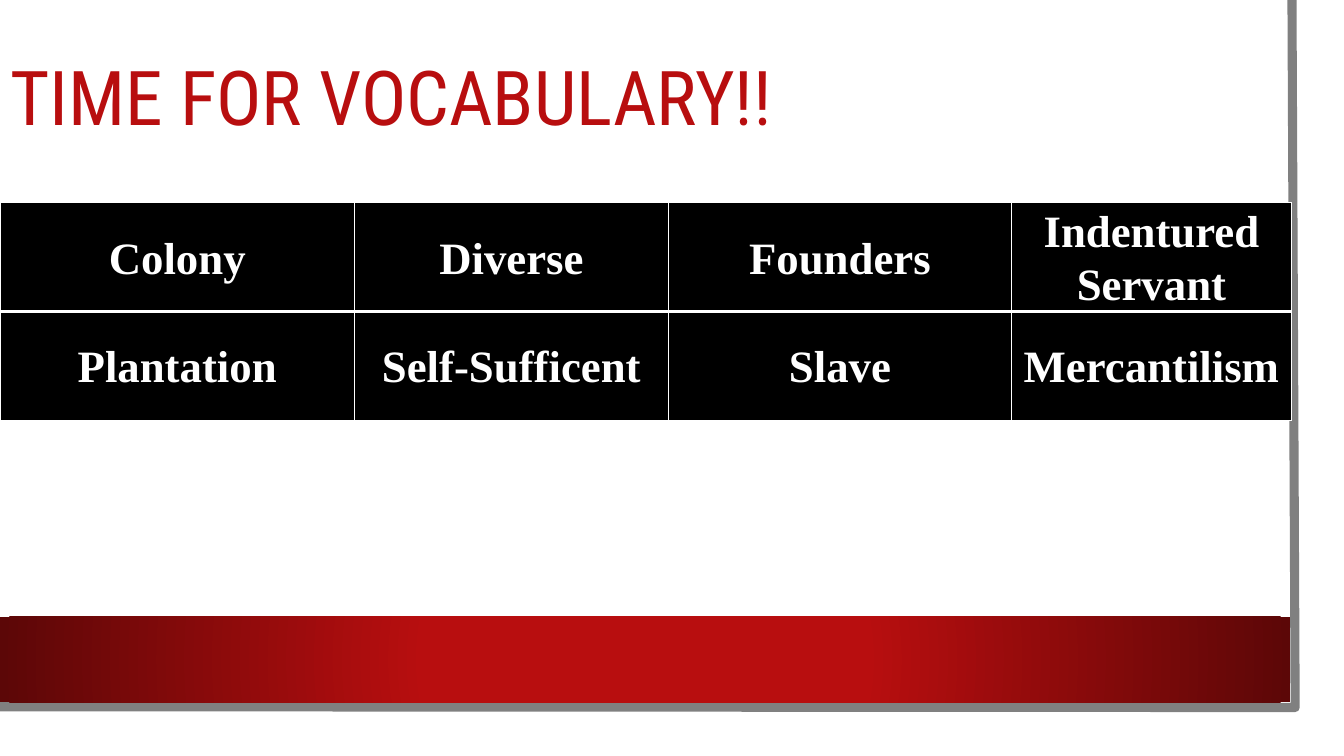
import pptx
import pptx.dml.color
import pptx.enum.shapes
import pptx.enum.text
import pptx.oxml
import pptx.oxml.ns
import pptx.util
from pptx.util import Cm

COLORS = {"white": "FFFFFF", "black": "000000", "gray": "808080",
          "red": "B80E0F", "dark red": "5C0707"}
WORDS = [["Colony", "Diverse", "Founders", "Indentured Servant"],
         ["Plantation", "Self-Sufficent", "Slave", "Mercantilism"]]
COLUMN_WIDTHS = [8.94, 7.9, 8.66, 7.04]
ROW_HEIGHT = 2.74


def rgb(name):
    """Return the named colour."""
    return pptx.dml.color.RGBColor.from_string(COLORS[name])


class VocabularySlide:
    """Hold the style and the current slide."""

    title_font = "Roboto Condensed"
    word_font = "Times New Roman"

    def __init__(self, page):
        """Remember the page to draw on."""
        self.page = page

    def format_text(self, frame, font, size, color, bold, spacing, align):
        """Format the only paragraph of a text frame."""
        para = frame.paragraphs[0]
        para.alignment = align
        para.line_spacing = spacing
        for span in para.runs:
            span.font.name = font
            span.font.size = pptx.util.Pt(size)
            span.font.bold = bold
            span.font.color.rgb = rgb(color)

    def rectangle(self, left, top, width, height):
        """Add a plain white rectangle."""
        box = self.page.shapes.add_shape(
            pptx.enum.shapes.MSO_SHAPE.RECTANGLE,
            Cm(left), Cm(top), Cm(width), Cm(height))
        box.shadow.inherit = False
        box.fill.solid()
        box.fill.fore_color.rgb = rgb("white")
        box.line.fill.background()
        return box

    def glowing_band(self, left, top, width, height):
        """Add a band that darkens from its centre outwards."""
        box = self.rectangle(left, top, width, height)
        box.fill.gradient()
        stops = zip(box.fill.gradient_stops, [(0.34, "red"), (1, "dark red")])
        for stop, (position, color) in stops:
            stop.position = position
            stop.color.rgb = rgb(color)
        linear = box.element.spPr.find(".//" + pptx.oxml.ns.qn("a:lin"))
        linear.getparent().replace(linear, pptx.oxml.parse_xml(
            f'<a:path {pptx.oxml.ns.nsdecls("a")} path="circle">'
            '<a:fillToRect l="50000" t="50000" r="50000" b="50000"/></a:path>'))

    def edge(self, points, color, weight):
        """Add an open outline through the points."""
        start, *rest = [(Cm(x), Cm(y)) for x, y in points]
        builder = self.page.shapes.build_freeform(*start)
        builder.add_line_segments(rest, close=False)
        outline = builder.convert_to_shape()
        outline.shadow.inherit = False
        outline.fill.background()
        outline.line.color.rgb = rgb(color)
        outline.line.width = pptx.util.Pt(weight)

    def title(self, text, left, top, width, height):
        """Place the title in front of the backdrop."""
        title = self.page.shapes.title
        title.left, title.top = Cm(left), Cm(top)
        title.width, title.height = Cm(width), Cm(height)
        frame = title.text_frame
        frame.text = text
        frame.word_wrap = True
        frame.auto_size = pptx.enum.text.MSO_AUTO_SIZE.NONE
        frame.vertical_anchor = pptx.enum.text.MSO_ANCHOR.MIDDLE
        self.format_text(frame, self.title_font, 54, "red", False, 0.9,
                         pptx.enum.text.PP_ALIGN.LEFT)
        title.element.getparent().append(title.element)

    def borders(self, cell, weights):
        """Draw white borders in the order left, right, top, bottom."""
        properties = cell._tc.get_or_add_tcPr()
        for index, (side, weight) in enumerate(zip("LRTB", weights)):
            properties.insert(index, pptx.oxml.parse_xml(
                f'<a:ln{side} {pptx.oxml.ns.nsdecls("a")} w="{pptx.util.Pt(weight)}">'
                f'<a:solidFill><a:srgbClr val="{COLORS["white"]}"/></a:solidFill>'
                f'</a:ln{side}>'))

    def word_table(self, words, left, top):
        """Add the table of vocabulary words."""
        table = self.page.shapes.add_table(
            len(words), len(COLUMN_WIDTHS), Cm(left), Cm(top),
            Cm(sum(COLUMN_WIDTHS)), Cm(ROW_HEIGHT * len(words))).table
        for column, width in zip(table.columns, COLUMN_WIDTHS):
            column.width = Cm(width)
        for index, (row, row_words) in enumerate(zip(table.rows, words)):
            row.height = Cm(ROW_HEIGHT)
            weights = [1, 1, 1, 3] if index == 0 else [1, 1, 3, 1]
            for cell, word in zip(row.cells, row_words):
                cell.text_frame.text = word
                cell.fill.solid()
                cell.fill.fore_color.rgb = rgb("black")
                cell.vertical_anchor = pptx.enum.text.MSO_ANCHOR.MIDDLE
                cell.margin_left = cell.margin_right = Cm(0.18)
                cell.margin_top = cell.margin_bottom = 0
                self.format_text(cell.text_frame, self.word_font, 32, "white",
                                 True, 1.07, pptx.enum.text.PP_ALIGN.CENTER)
                self.borders(cell, weights)


def main():
    """Build and save the deck."""
    deck = pptx.Presentation()
    deck.slide_width, deck.slide_height = Cm(33.87), Cm(19.05)
    slide = VocabularySlide(deck.slides.add_slide(deck.slide_layouts[5]))
    slide.rectangle(0, 0, 33.27, 18.47)
    slide.edge([(32.56, 0), (32.64, 17.83), (-0.08, 17.81)], "gray", 6.5)
    slide.glowing_band(0, 15.54, 32.51, 2.16)
    slide.title("TIME FOR VOCABULARY!!", 0, 0, 30.78, 5.11)
    slide.word_table(WORDS, 0, 5.11)
    deck.save("out.pptx")


if __name__ == "__main__":
    main()
